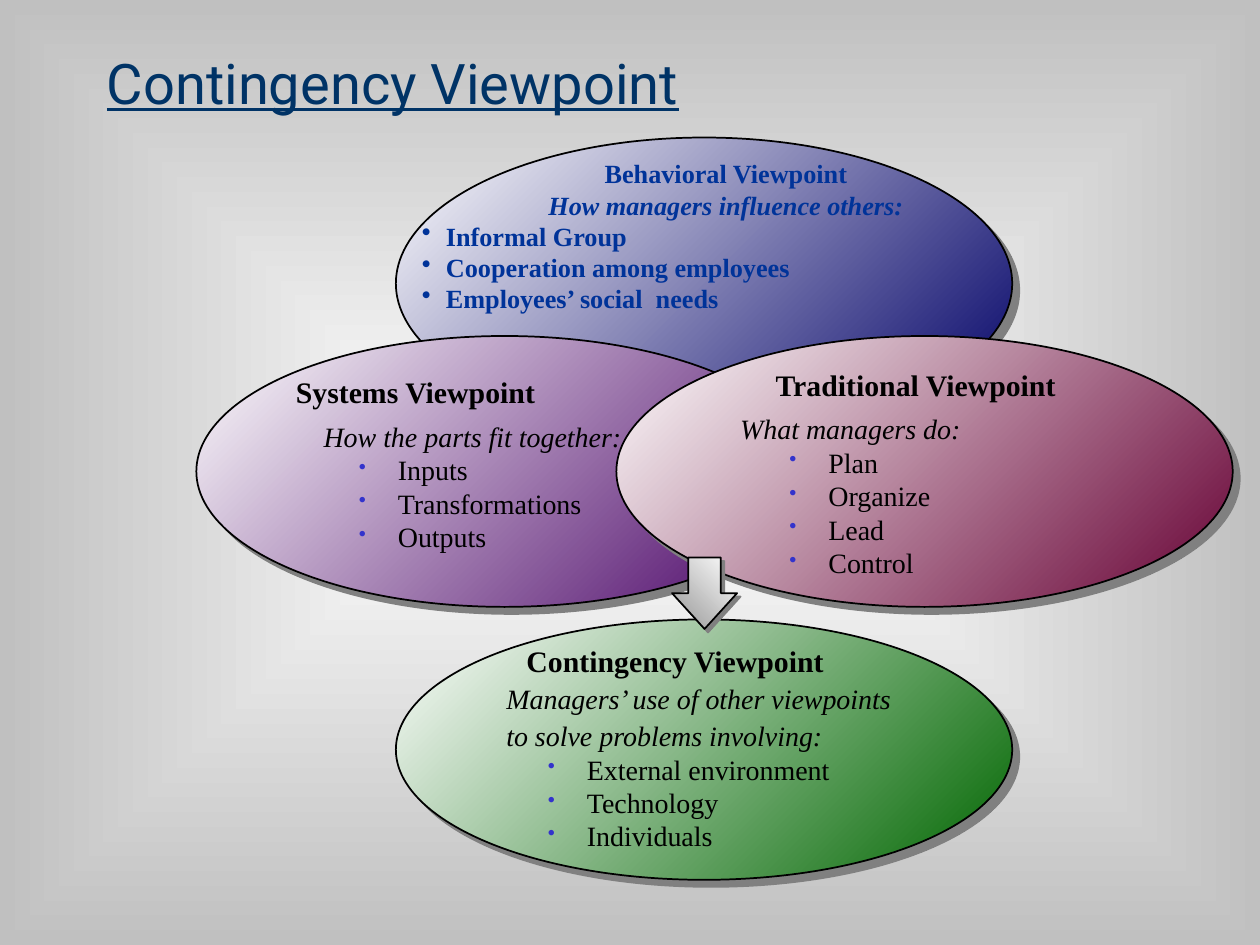
from dataclasses import dataclass

from lxml.etree import SubElement
from pptx import Presentation
from pptx.dml.color import RGBColor
from pptx.enum.shapes import MSO_SHAPE
from pptx.enum.text import MSO_ANCHOR, PP_ALIGN
from pptx.oxml import parse_xml
from pptx.oxml.ns import nsdecls, qn
from pptx.util import Inches, Pt


@dataclass(frozen=True)
class Theme:
    title_font: str = "Roboto"
    body_font: str = "Times New Roman"
    title_color: str = "003366"
    accent: str = "003399"
    ink: str = "000000"
    white: str = "FFFFFF"
    backdrop: str = "C0C0C0"
    shadow: str = "808080"
    bullet: str = "3333CC"
    navy: str = "000066"
    purple: str = "480165"
    maroon: str = "660033"
    green: str = "006600"
    silver: str = "969696"
    title_size: int = 32
    heading_size: int = 17
    text_size: int = 16
    small_size: int = 15


class ViewpointSlide:
    """Draws viewpoint elements on a slide divided into 120 columns and 90 rows."""

    def __init__(self, presentation, theme):
        self.theme = theme
        self.column = presentation.slide_width / 120
        self.row = presentation.slide_height / 90
        self.slide = presentation.slides.add_slide(presentation.slide_layouts[6])

    def box(self, left, top, width, height):
        return [round(left * self.column), round(top * self.row),
                round(width * self.column), round(height * self.row)]

    def gradient(self, fill, color):
        fill.gradient()
        for stop, shade, position in zip(fill.gradient_stops, (self.theme.white, color), (0, 1)):
            stop.color.rgb = RGBColor.from_string(shade)
            stop.position = position

    def background(self):
        self.gradient(self.slide.background.fill, self.theme.backdrop)
        gradient = self.slide.element.find(".//" + qn("a:gradFill"))
        gradient.remove(gradient.find(qn("a:lin")))
        gradient.append(parse_xml(
            f'<a:path {nsdecls("a")} path="shape"><a:fillToRect l="50000" t="50000" '
            'r="50000" b="50000"/></a:path>'))

    def shaded_shape(self, kind, place, color, shadow_distance):
        shape = self.slide.shapes.add_shape(kind, *self.box(*place))
        self.gradient(shape.fill, color)
        shape.fill.gradient_angle = 315
        shape.line.color.rgb = RGBColor.from_string(self.theme.ink)
        shape.line.width = Pt(1)
        shape.shadow.inherit = False
        shape._element.spPr.find(qn("a:effectLst")).append(parse_xml(
            f'<a:outerShdw {nsdecls("a")} blurRad="0" dist="{Pt(shadow_distance)}" dir="2700000" '
            f'algn="ctr" rotWithShape="0"><a:srgbClr val="{self.theme.shadow}"/></a:outerShdw>'))
        return shape

    def ellipse(self, left, top, height, color):
        self.shaded_shape(MSO_SHAPE.OVAL, (left, top, 58.7, height), color, 5.7)

    def arrow(self, *place):
        arrow = self.shaded_shape(MSO_SHAPE.RIGHT_ARROW, place, self.theme.silver, 2.8)
        arrow.rotation = 90
        arrow.adjustments[0] = 0.5
        arrow.adjustments[1] = 0.55

    def text_box(self, *place):
        frame = self.slide.shapes.add_textbox(*self.box(*place)).text_frame
        frame.word_wrap = True
        frame.vertical_anchor = MSO_ANCHOR.TOP
        return frame

    def style(self, paragraph, font_name, size, color, **flags):
        for run in paragraph.runs:
            run.font.name = font_name
            run.font.size = Pt(size)
            run.font.color.rgb = RGBColor.from_string(color)
            for flag, value in flags.items():
                setattr(run.font, flag, value)

    def title(self, text, *place):
        frame = self.text_box(*place)
        frame.text = text
        self.style(frame.paragraphs[0], self.theme.title_font, self.theme.title_size,
                   self.theme.title_color, underline=True)

    def line(self, frame, text, size, color, spacing, margin=0, hanging=0, **flags):
        paragraph = frame.paragraphs[0]
        if paragraph.text:
            paragraph = frame.add_paragraph()
        paragraph.text = text
        paragraph.line_spacing = spacing
        paragraph.space_before = Pt(round(size * 0.23, 1))
        properties = paragraph._p.get_or_add_pPr()
        properties.set("marL", str(Inches(margin)))
        properties.set("indent", str(-Inches(hanging)))
        self.style(paragraph, self.theme.body_font, size, color, **flags)
        return paragraph

    def bullet(self, paragraph, color, percent):
        properties = paragraph._p.get_or_add_pPr()
        SubElement(SubElement(properties, qn("a:buClr")), qn("a:srgbClr")).set("val", color)
        SubElement(properties, qn("a:buSzPct")).set("val", str(percent * 1000))
        SubElement(properties, qn("a:buChar")).set("char", "•")

    def behavioral(self, place, heading, subheading, items):
        theme = self.theme
        frame = self.text_box(*place)
        for text, italic in ((heading, False), (subheading, True)):
            paragraph = self.line(frame, text, theme.small_size, theme.accent, 0.8, 0.19,
                                  bold=True, italic=italic)
            paragraph.alignment = PP_ALIGN.CENTER
        for item in items:
            paragraph = self.line(frame, item, theme.small_size, theme.accent, 0.8, 0.19, 0.19,
                                  bold=True)
            self.bullet(paragraph, theme.accent, 100)

    def viewpoint(self, place, heading, subheadings, items, margins, spacings):
        theme = self.theme
        frame = self.text_box(*place)
        self.line(frame, heading, theme.heading_size, theme.ink, spacings[0], margins[0], bold=True)
        for text in subheadings:
            self.line(frame, text, theme.text_size, theme.ink, spacings[1], margins[1], italic=True)
        for item in items:
            paragraph = self.line(frame, item, theme.text_size, theme.ink, 0.8, 0.81, 0.31)
            self.bullet(paragraph, theme.bullet, 75)


def main():
    presentation = Presentation()
    presentation.slide_width = Inches(10)
    presentation.slide_height = Inches(7.5)
    theme = Theme()
    page = ViewpointSlide(presentation, theme)
    page.background()
    page.title("Contingency Viewpoint", 9, 4, 107, 11)

    page.ellipse(37.7, 13.1, 27.8, theme.navy)
    page.ellipse(18.7, 32, 25.8, theme.purple)
    page.ellipse(58.7, 32, 25.8, theme.maroon)
    page.ellipse(37.7, 59, 24.8, theme.green)

    page.behavioral((39, 15, 58, 19.2), "Behavioral Viewpoint", "How managers influence others:",
                    ["Informal Group", "Cooperation among employees", "Employees’ social  needs"])
    page.viewpoint((27, 35, 55, 19.2), "Systems Viewpoint", ["How the parts fit together:"],
                   ["Inputs", "Transformations", "Outputs"], (0, 0.22), (1.0, 1.1))
    page.viewpoint((68, 34.3, 40, 19.2), "Traditional Viewpoint", ["What managers do:"],
                   ["Plan", "Organize", "Lead", "Control"], (0.39, 0.11), (1.0, 1.1))
    page.viewpoint((45, 60.3, 49.6, 22), "Contingency Viewpoint",
                   ["Managers’ use of other viewpoints", "to solve problems involving:"],
                   ["External environment", "Technology", "Individuals"], (0.33, 0.17), (1.1, 0.9))
    page.arrow(63.7, 53.4, 6.8, 6.2)
    presentation.save("out.pptx")


if __name__ == "__main__":
    main()
